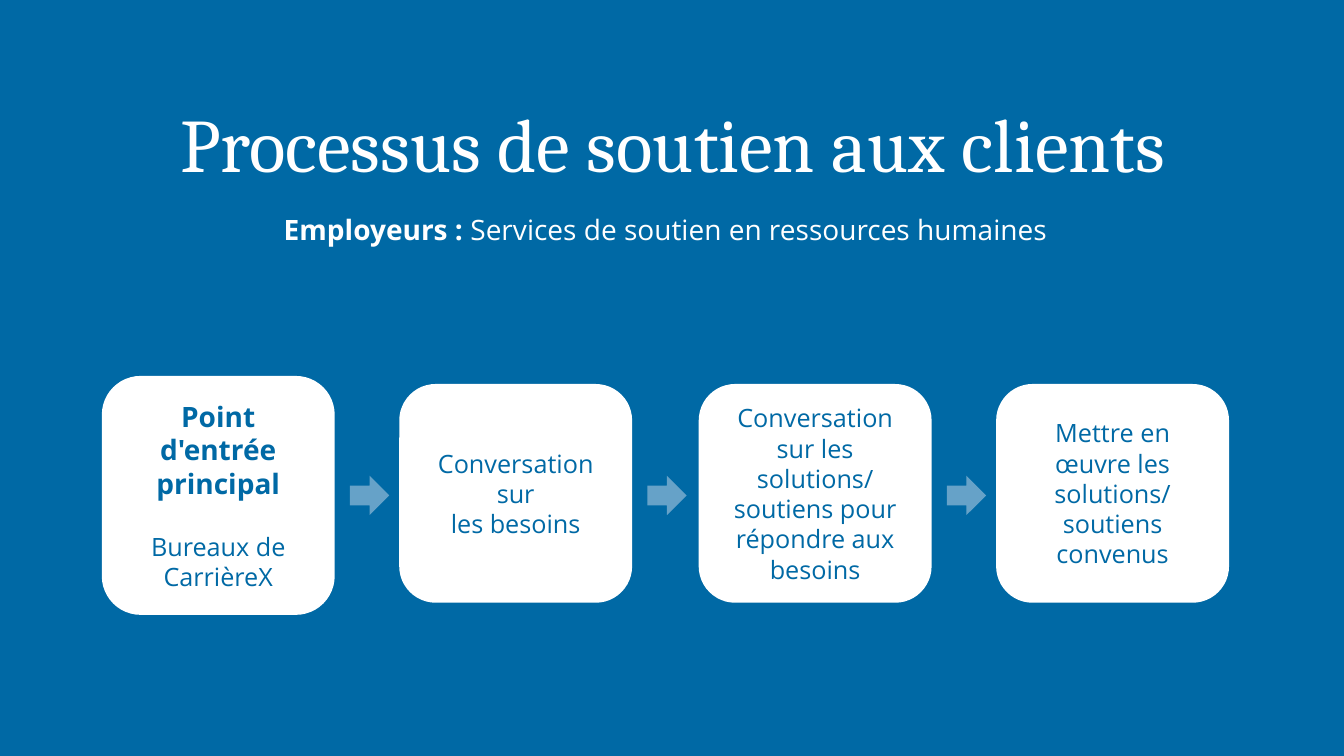
from pptx import Presentation
from pptx.dml.color import RGBColor
from pptx.enum import shapes, text
from pptx.util import Inches, Pt

BLUE = "0069A5"
WHITE = "FFFFFF"
ARROW_BLUE = "66A2C8"
BODY_FONT = "Open Sans"
STEP_WIDTH = 2.31
STEPS = [
    (1.01, 3.73, 2.37, ["Point d'entrée principal", "Bureaux de CarrièreX"]),
    (3.96, 3.81, 2.17, ["Conversation sur", "les besoins"]),
    (6.93, 3.81, 2.17, ["Conversation sur les solutions/ soutiens pour répondre aux besoins"]),
    (9.88, 3.81, 2.17, ["Mettre en œuvre les solutions/", "soutiens convenus"]),
]


def color(value):
    return RGBColor.from_string(value)


def format_run(run, size, value, font=BODY_FONT, bold=False):
    run.font.name = font
    run.font.size = Pt(size)
    run.font.bold = bold
    run.font.color.rgb = color(value)


def add_box(slide, kind, left, top, width, height, fill):
    shape = slide.shapes.add_shape(
        kind, Inches(left), Inches(top), Inches(width), Inches(height))
    shape.shadow.inherit = False
    shape.fill.solid()
    shape.fill.fore_color.rgb = color(fill)
    shape.line.fill.background()
    return shape


def add_heading(slide, left, top, width, height, parts, size, font):
    box = slide.shapes.add_textbox(
        Inches(left), Inches(top), Inches(width), Inches(height))
    box.text_frame.word_wrap = True
    paragraph = box.text_frame.paragraphs[0]
    paragraph.alignment = text.PP_ALIGN.CENTER
    for wording, bold in parts:
        run = paragraph.add_run()
        run.text = wording
        format_run(run, size, WHITE, font, bold)


def add_step(slide, left, top, height, lines):
    step = add_box(slide, shapes.MSO_SHAPE.ROUNDED_RECTANGLE,
                   left, top, STEP_WIDTH, height, WHITE)
    frame = step.text_frame
    frame.word_wrap = True
    frame.vertical_anchor = text.MSO_ANCHOR.MIDDLE
    frame.text = "\n".join(lines)
    for paragraph in frame.paragraphs:
        paragraph.alignment = text.PP_ALIGN.CENTER
        for run in paragraph.runs:
            format_run(run, 18, BLUE)
    return step


def emphasize_entry(step):
    title, office = step.text_frame.paragraphs
    format_run(title.runs[0], 20, BLUE, bold=True)
    office.space_before = Pt(22)


def add_arrow(slide, left):
    arrow = add_box(slide, shapes.MSO_SHAPE.DOWN_ARROW, left, 4.72, 0.39, 0.39, ARROW_BLUE)
    arrow.rotation = 270


def main():
    presentation = Presentation()
    presentation.slide_width = Inches(13.33)
    presentation.slide_height = Inches(7.5)
    slide = presentation.slides.add_slide(presentation.slide_layouts[6])
    background = slide.background.fill
    background.solid()
    background.fore_color.rgb = color(BLUE)
    add_heading(slide, 0.94, 0.91, 11.46, 1.01,
                [("Processus de soutien aux clients", False)], 54, "Cambria")
    add_heading(slide, 2.5, 2.06, 8.2, 0.77,
                [("Employeurs : ", True),
                 ("Services de soutien en ressources humaines", False)], 20, BODY_FONT)
    steps = [add_step(slide, *step) for step in STEPS]
    emphasize_entry(steps[0])
    for left, *_ in STEPS[:-1]:
        add_arrow(slide, left + STEP_WIDTH + 0.15)
    presentation.save("out.pptx")


if __name__ == "__main__":
    main()
